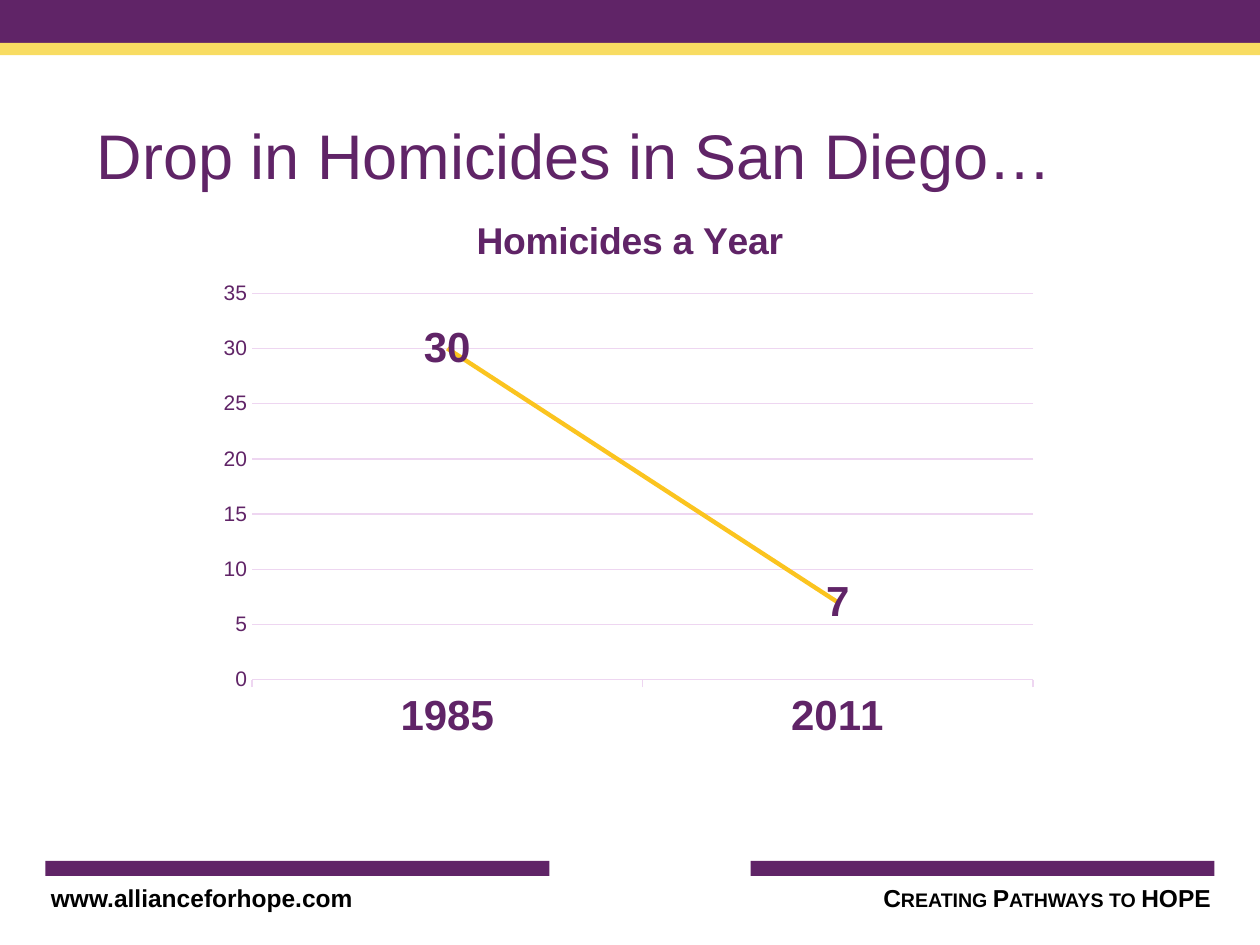
from lxml import etree
from pptx import Presentation
from pptx.chart.data import CategoryChartData
from pptx.dml.color import RGBColor
from pptx.enum.chart import XL_CHART_TYPE, XL_LABEL_POSITION, XL_TICK_MARK
from pptx.enum.shapes import MSO_SHAPE
from pptx.enum.text import MSO_ANCHOR, PP_ALIGN
from pptx.oxml import parse_xml
from pptx.util import Pt

PURPLE = RGBColor(0x60, 0x24, 0x67)
YELLOW = RGBColor(0xF8, 0xDC, 0x62)
GOLD = RGBColor(0xFB, 0xC4, 0x1F)
LILAC = RGBColor(0xEE, 0xD6, 0xF1)
BLACK = RGBColor(0, 0, 0)
WHITE = RGBColor(0xFF, 0xFF, 0xFF)
RECT = MSO_SHAPE.RECTANGLE
LINE = XL_CHART_TYPE.LINE
CENTER = XL_LABEL_POSITION.CENTER
OUTSIDE, NONE = XL_TICK_MARK.OUTSIDE, XL_TICK_MARK.NONE
MIDDLE = MSO_ANCHOR.MIDDLE
LEFT, RIGHT = PP_ALIGN.LEFT, PP_ALIGN.RIGHT
CHART_NS = "http://schemas.openxmlformats.org/drawingml/2006/chart"


def style(font, size, color, bold=False):
    font.name = "Arial"
    font.size = Pt(size)
    font.bold = bold
    font.color.rgb = color


deck = Presentation()
deck.slide_width, deck.slide_height = Pt(720), Pt(540)
slide = deck.slides.add_slide(deck.slide_layouts[5])
shapes = slide.shapes

# Top bands and the footer rule, split by a white block
for x, y, wide, high, color in [
    (0, 0, 720, 24.5, PURPLE),
    (0, 24.5, 720, 7, YELLOW),
    (26, 492, 668, 8.5, PURPLE),
    (314, 472, 115, 55, WHITE),
]:
    band = shapes.add_shape(RECT, Pt(x), Pt(y), Pt(wide), Pt(high))
    band.shadow.inherit = False
    band.fill.solid()
    band.fill.fore_color.rgb = color
    band.line.fill.background()

# Footer texts
for text, x, wide, align, caps in [
    ("www.allianceforhope.com", 22, 200, LEFT, "none"),
    ("Creating Pathways to HOPE", 468, 231, RIGHT, "small"),
]:
    box = shapes.add_textbox(Pt(x), Pt(501), Pt(wide), Pt(24.5))
    box.text_frame.word_wrap = True
    para = box.text_frame.paragraphs[0]
    para.text = text
    para.alignment = align
    run = para.runs[0]
    style(run.font, 14, BLACK, True)
    run.font._element.set("cap", caps)

# Title
title = shapes.title
title.left, title.top, title.width, title.height = Pt(48), Pt(66), Pt(642), Pt(44)
frame = title.text_frame
frame.text = "Drop in Homicides in San Diego…"
frame.vertical_anchor = MIDDLE
frame.paragraphs[0].alignment = LEFT
style(frame.paragraphs[0].runs[0].font, 36, PURPLE)

# Line chart
data = CategoryChartData()
data.categories = ["1985", "2011"]
data.add_series("Homicides a Year", [30, 7])
chart = shapes.add_chart(LINE, Pt(120), Pt(110), Pt(480), Pt(320), data).chart
style(chart.font, 10, BLACK)
chart.has_legend = False
chart.has_title = True
head = chart.chart_title.text_frame
head.text = "Homicides a Year"
style(head.paragraphs[0].runs[0].font, 21.3, PURPLE, True)

# Series and its value labels
plot = chart.plots[0]
plot.vary_by_categories = False
series = plot.series[0]
series.smooth = False
series.format.line.color.rgb = GOLD
series.format.line.width = Pt(2.5)
labels = series.data_labels
labels.show_value = True
labels.position = CENTER
style(labels.font, 24, PURPLE, True)

# Axes and grid
years, count = chart.category_axis, chart.value_axis
style(years.tick_labels.font, 24, PURPLE, True)
style(count.tick_labels.font, 12, PURPLE)
years.major_tick_mark = OUTSIDE
count.major_tick_mark = NONE
count.minimum_scale, count.maximum_scale, count.major_unit = 0, 35, 5
count.has_major_gridlines = True
count.format.line.fill.background()
for rule in (years.format.line, count.major_gridlines.format.line):
    rule.color.rgb = LILAC
    rule.width = Pt(0.75)

# Fixed place of the plot inside the chart
layout = parse_xml(f'<c:layout xmlns:c="{CHART_NS}"><c:manualLayout/></c:layout>')
for tag, value in [
    ("layoutTarget", "inner"), ("xMode", "edge"), ("yMode", "edge"),
    ("x", "0.05"), ("y", "0.18"), ("w", "0.93"), ("h", "0.69"),
]:
    etree.SubElement(layout[0], f"{{{CHART_NS}}}{tag}").set("val", value)
area = chart._chartSpace.chart.plotArea
for old in area.findall(f"{{{CHART_NS}}}layout"):
    area.remove(old)
area.insert(0, layout)

deck.save("out.pptx")
